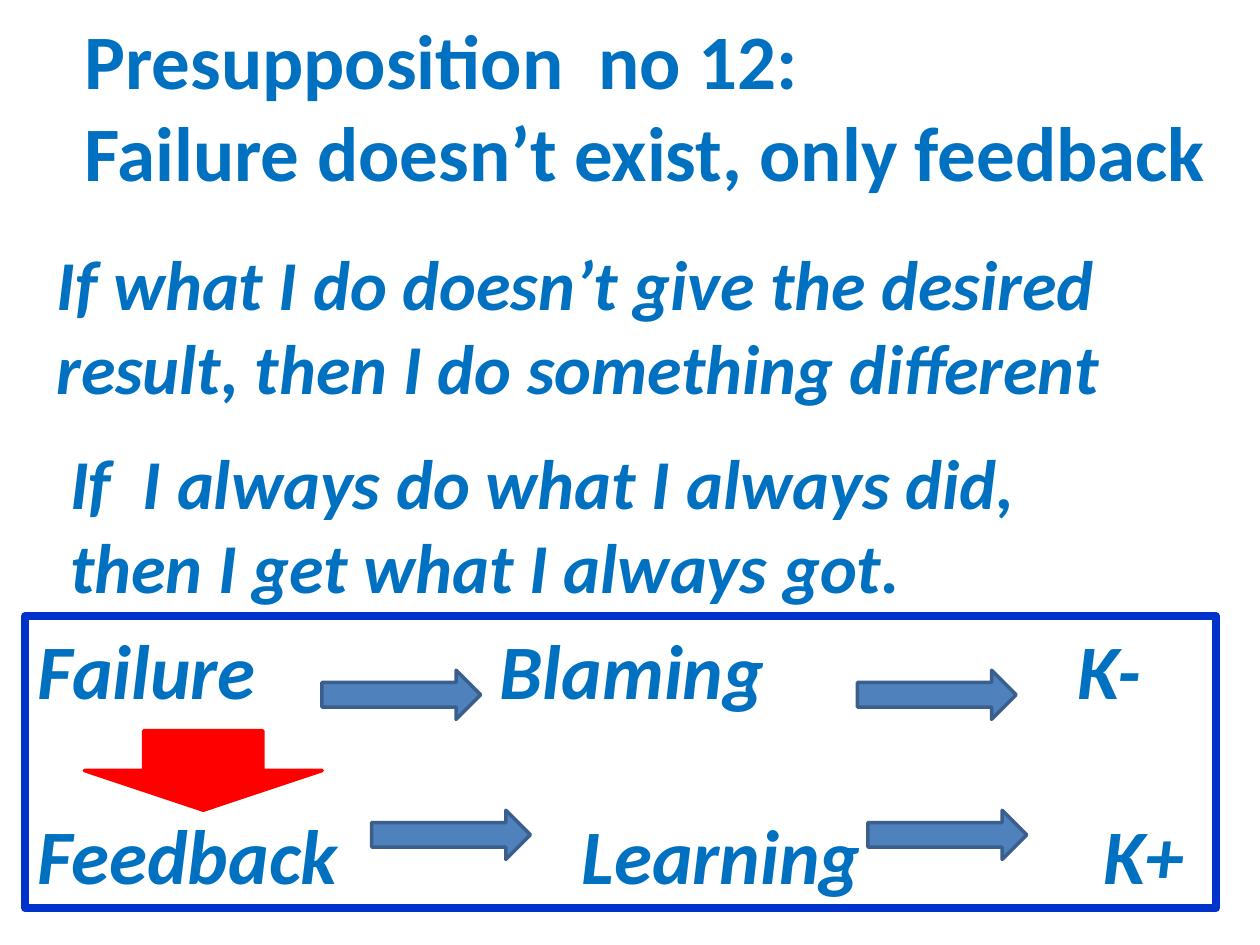
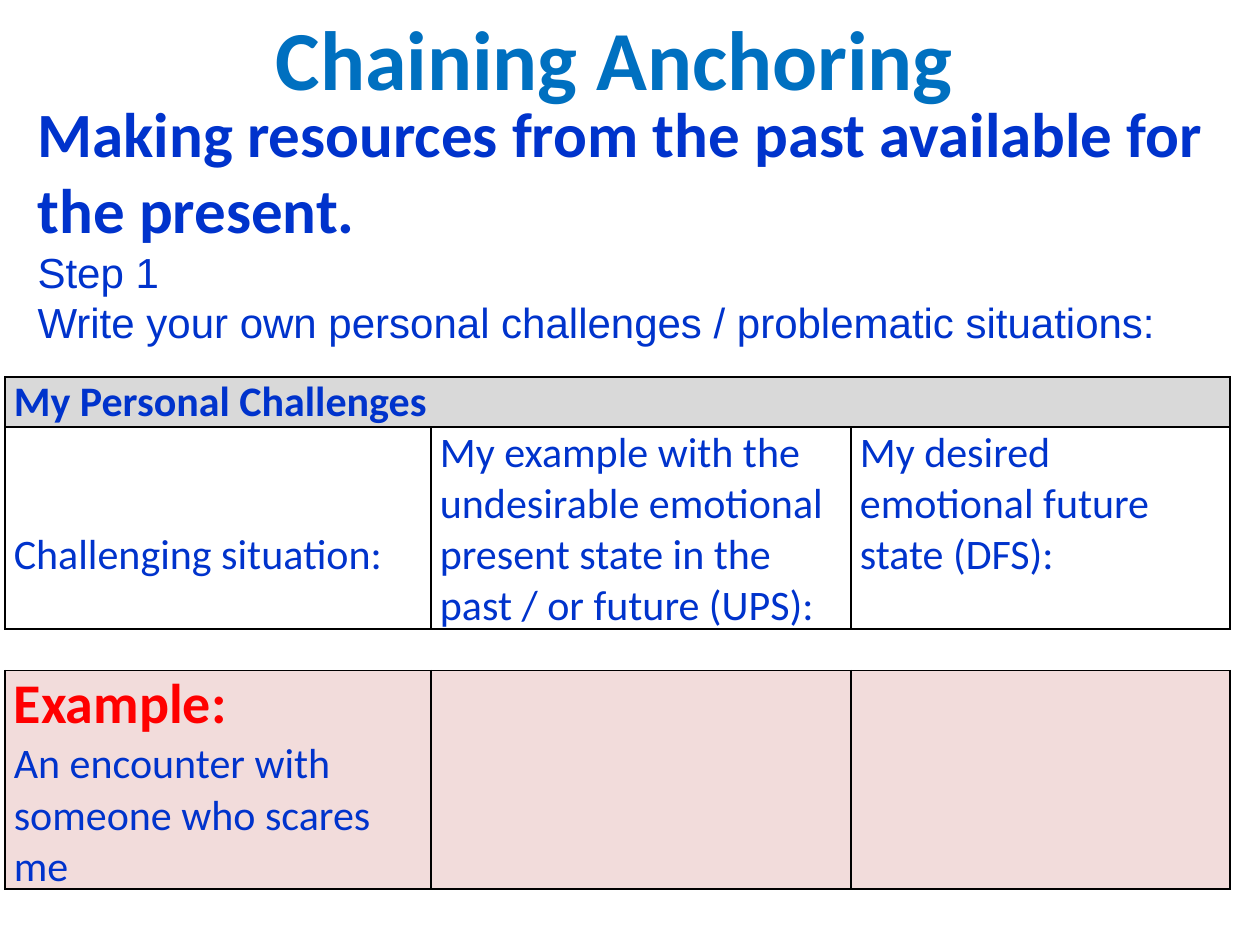
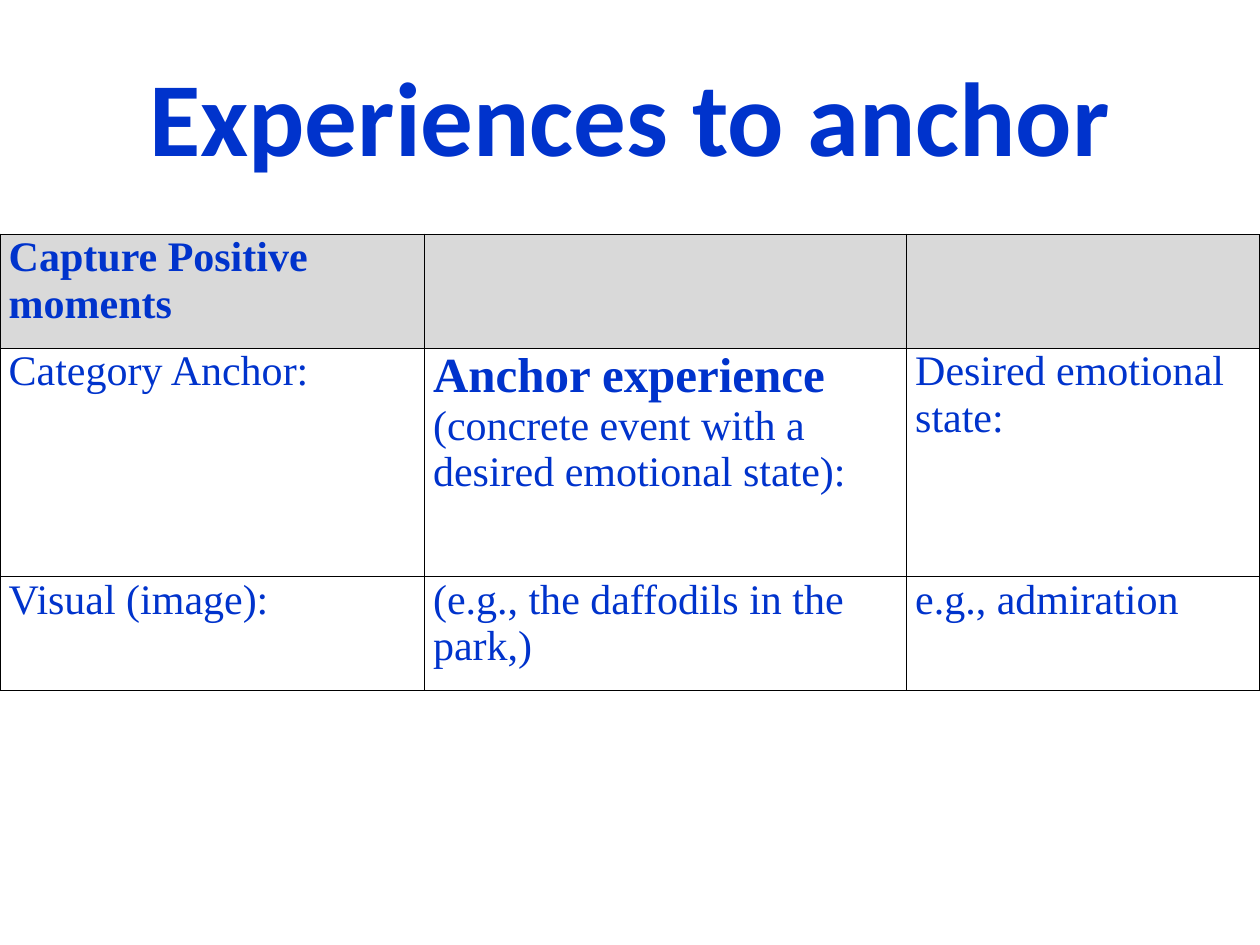
"""Builds three slides on feedback and anchoring."""
from dataclasses import dataclass, replace

import pptx
import pptx.dml.color
import pptx.enum.shapes
import pptx.enum.text
import pptx.oxml
import pptx.oxml.ns
import pptx.util
from lxml import etree

Pt = pptx.util.Pt
RGBColor = pptx.dml.color.RGBColor
Shapes = pptx.enum.shapes.MSO_SHAPE
Align = pptx.enum.text.PP_ALIGN
Anchor = pptx.enum.text.MSO_ANCHOR
qn = pptx.oxml.ns.qn

SKY = RGBColor(0x00, 0x70, 0xC0)
ROYAL = RGBColor(0x00, 0x33, 0xCC)
RED = RGBColor(0xFF, 0x00, 0x00)
STEEL = RGBColor(0x4F, 0x81, 0xBD)
STEEL_DARK = RGBColor(0x3A, 0x5F, 0x8C)
GREY = RGBColor(0xD9, 0xD9, 0xD9)
PINK = RGBColor(0xF2, 0xDC, 0xDB)


@dataclass(frozen=True)
class Style:
    """Look of a run of text."""
    size: float
    color: RGBColor
    bold: bool = False
    italic: bool = False
    font: str = "Calibri"


TITLE = Style(44, SKY, bold=True)
QUOTE = Style(40, SKY, bold=True, italic=True)
CHAIN = replace(QUOTE, size=44)
BODY = Style(24, ROYAL)
BODY_BOLD = replace(BODY, bold=True)
STEP = replace(BODY, font="Arial")
SERIF = replace(BODY, font="Times New Roman")
SERIF_BOLD = replace(SERIF, bold=True)


def add_runs(paragraph, runs):
    """Add (text, style) runs to a paragraph."""
    for text, style in runs:
        run = paragraph.add_run()
        run.text = text
        run.font.size = Pt(style.size)
        run.font.name = style.font
        run.font.bold = style.bold
        run.font.italic = style.italic
        run.font.color.rgb = style.color


def write(frame, paragraphs, align=Align.LEFT):
    """Fill a text frame with paragraphs, each a list of runs."""
    for index, runs in enumerate(paragraphs):
        paragraph = frame.add_paragraph() if index else frame.paragraphs[0]
        paragraph.alignment = align
        add_runs(paragraph, runs)


def add_text(slide, box, paragraphs, wrap=True, align=Align.LEFT):
    """Add a text box and return its text frame."""
    frame = slide.shapes.add_textbox(*map(Pt, box)).text_frame
    frame.word_wrap = wrap
    frame.auto_size = pptx.enum.text.MSO_AUTO_SIZE.SHAPE_TO_FIT_TEXT
    write(frame, paragraphs, align)
    return frame


def add_figure(slide, kind, box, fill, line, width=2):
    """Add a preset shape; without a fill colour it stays hollow."""
    shape = slide.shapes.add_shape(kind, *map(Pt, box))
    shape.shadow.inherit = False
    if fill is None:
        shape.fill.background()
    else:
        shape.fill.solid()
        shape.fill.fore_color.rgb = fill
    shape.line.color.rgb = line
    shape.line.width = Pt(width)
    return shape


def set_tabs(paragraph, positions):
    """Give a paragraph left tab stops."""
    properties = paragraph._p.get_or_add_pPr()
    tabs = etree.SubElement(properties, qn("a:tabLst"))
    for position in positions:
        etree.SubElement(tabs, qn("a:tab"), pos=str(Pt(position)), algn="l")


def add_borders(cell):
    """Draw a black one-point line on every side of a cell."""
    properties = cell._tc.get_or_add_tcPr()
    for side in ("a:lnL", "a:lnR", "a:lnT", "a:lnB"):
        line = etree.SubElement(properties, qn(side), w=str(Pt(1)))
        fill = etree.SubElement(line, qn("a:solidFill"))
        etree.SubElement(fill, qn("a:srgbClr"), val="000000")


def add_grid(slide, left, top, widths, heights, rows, fills):
    """Add a bordered table with one fill per row and return it."""
    table = slide.shapes.add_table(
        len(heights), len(widths), Pt(left), Pt(top), Pt(sum(widths)), Pt(sum(heights))
    ).table
    table.first_row = table.horz_banding = False
    for column, width in zip(table.columns, widths):
        column.width = Pt(width)
    for row, height, contents, fill in zip(table.rows, heights, rows, fills):
        row.height = Pt(height)
        for cell, paragraphs in zip(row.cells, contents):
            cell.margin_left = cell.margin_right = Pt(5)
            cell.margin_top = cell.margin_bottom = 0
            add_borders(cell)
            if fill is None:
                cell.fill.background()
            else:
                cell.fill.solid()
                cell.fill.fore_color.rgb = fill
            write(cell.text_frame, paragraphs)
    return table


def add_chains(slide):
    """Add the framed chains from failure and from feedback."""
    frame_box = add_figure(slide, Shapes.RECTANGLE, (14.4, 352, 680.4, 167), None, ROYAL, 4.5)
    frame = frame_box.text_frame
    frame.vertical_anchor = Anchor.TOP
    write(frame, [[("Failure\tBlaming\tK-", CHAIN)], [("Feedback\tLearning\tK+", CHAIN)]])
    frame.paragraphs[1].space_before = Pt(53)
    for paragraph, stops in zip(frame.paragraphs, [(264, 594), (311, 609)]):
        set_tabs(paragraph, stops)
    for top, lefts in [(383, (184, 490)), (463, (212.4, 496))]:
        for left in lefts:
            add_figure(slide, Shapes.RIGHT_ARROW, (left, top, 90.7, 28.1), STEEL, STEEL_DARK)
    add_figure(slide, Shapes.DOWN_ARROW, (48.2, 417.6, 136, 45.4), RED, RED)


def build_feedback(slide):
    """Build the slide on failure and feedback."""
    add_text(slide, (25.2, 134, 680.4, 104.4), [
        [("If what I do doesn’t give the desired result, then I do something different", QUOTE)],
    ])
    add_text(slide, (33.1, 247.7, 559.4, 104.4), [
        [("If  I always do what I always did,", QUOTE)],
        [("then I get what I always got.", QUOTE)],
    ], wrap=False)
    add_text(slide, (41, 3.6, 661.7, 113.8), [
        [("Presupposition  no 12:", TITLE)],
        [("Failure doesn’t exist, only feedback", TITLE)],
    ], wrap=False)
    add_chains(slide)


def build_chaining(slide):
    """Build the slide on chaining anchoring."""
    widths = (243.5, 240, 216.5)
    add_text(slide, (150.5, 0, 405.4, 65.5),
             [[("Chaining Anchoring", replace(TITLE, size=48))]], wrap=False)
    challenges = add_grid(slide, 2.9, 215.3, widths, (28.8, 115.2), [
        [[[("My Personal Challenges", BODY_BOLD)]], [], []],
        [
            [[("Challenging situation:", BODY)]],
            [[("My example with the undesirable emotional present state in the "
               "past / or future (UPS):", BODY)]],
            [[("My desired emotional future state (DFS):", BODY)]],
        ],
    ], (GREY, None))
    challenges.cell(0, 0).merge(challenges.cell(0, 2))
    challenges.cell(1, 0).margin_top = Pt(58.6)
    frame = add_text(slide, (14.4, 48.2, 689, 155), [
        [("Making resources from the past available for the present.",
          replace(BODY_BOLD, size=36))],
        [("Step 1", STEP)],
        [("Write your own personal challenges / problematic situations:", STEP)],
    ])
    frame.margin_top = Pt(6)
    add_grid(slide, 2.9, 383.2, widths, (124.6,), [
        [
            [[("Example:", Style(32, RED, bold=True))],
             [("An encounter with someone who scares me", BODY)]],
            [],
            [],
        ],
    ], (PINK,))


def build_experiences(slide):
    """Build the slide on experiences to anchor."""
    add_grid(slide, 0, 133.9, (242.5, 275.5, 202), (65.2, 130.4, 65.2), [
        [[[("Capture Positive moments", SERIF_BOLD)]], [], []],
        [
            [[("Category Anchor:", SERIF)]],
            [[("Anchor experience", replace(SERIF_BOLD, size=28)),
              (" (concrete event with a desired emotional state):", SERIF)]],
            [[("Desired emotional state:", SERIF)]],
        ],
        [
            [[("Visual (image):", SERIF)]],
            [[("(e.g., the daffodils in the park,)", SERIF)]],
            [[("e.g., admiration", SERIF)]],
        ],
    ], (GREY, None, None))
    add_text(slide, (0, 25.9, 720, 80),
             [[("Experiences to anchor", replace(BODY_BOLD, size=60))]], align=Align.CENTER)


def main():
    """Build and save the presentation."""
    presentation = pptx.Presentation()
    presentation.slide_width = Pt(720)
    presentation.slide_height = Pt(540)
    for build in (build_feedback, build_chaining, build_experiences):
        build(presentation.slides.add_slide(presentation.slide_layouts[6]))
    presentation.save("out.pptx")


if __name__ == "__main__":
    main()
